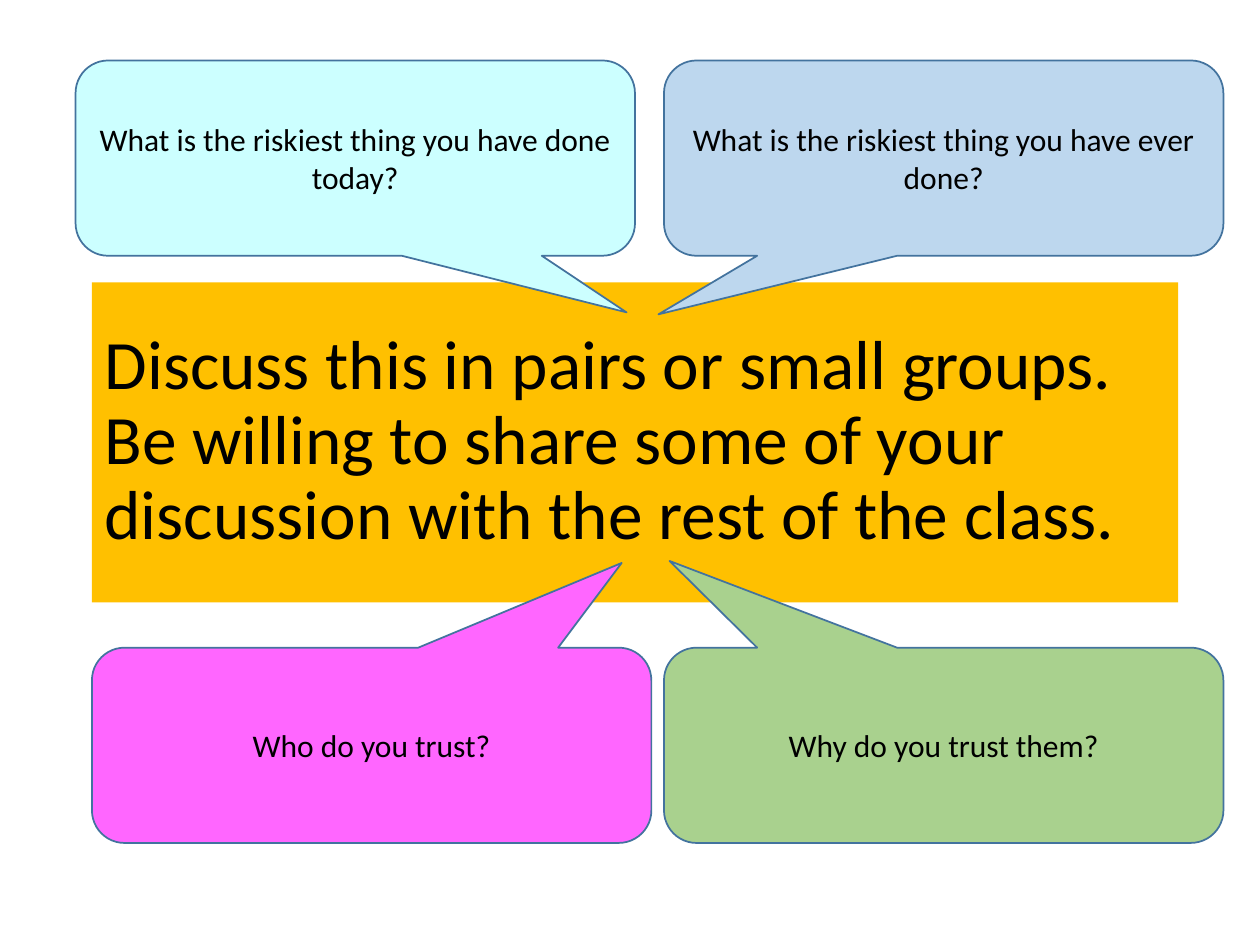
from dataclasses import dataclass

from lxml import etree
from pptx import Presentation
from pptx.dml.color import RGBColor
from pptx.enum.shapes import MSO_SHAPE
from pptx.enum.text import MSO_ANCHOR, MSO_AUTO_SIZE, PP_ALIGN
from pptx.oxml.ns import qn
from pptx.slide import Slide
from pptx.text.text import TextFrame
from pptx.util import Inches, Pt

CALLOUT = MSO_SHAPE.ROUNDED_RECTANGULAR_CALLOUT
MIDDLE = MSO_ANCHOR.MIDDLE
NO_AUTOFIT = MSO_AUTO_SIZE.NONE
LEFT, CENTER = PP_ALIGN.LEFT, PP_ALIGN.CENTER

FONT = "Calibri"
COLORS = {
    "text": "000000",
    "instruction": "FFC000",
    "outline": "43739E",
    "ever": "BDD7EE",
    "today": "CCFFFF",
    "who": "FF66FF",
    "why": "A9D18E",
}
BUBBLE_WIDTH, BUBBLE_HEIGHT = 4.44, 1.55
TOP_ROW, BOTTOM_ROW = 0.48, 5.14
RIGHT_COLUMN = 5.27
CORNER = 0.167


@dataclass(frozen=True)
class Bubble:
    question: str
    color: str
    left: float
    top: float
    tail_x: float
    tail_y: float


BUBBLES = [
    Bubble("What is the riskiest thing you have ever done?", "ever",
           RIGHT_COLUMN, TOP_ROW, -0.51, 0.8),
    Bubble("What is the riskiest thing you have done today?", "today",
           0.6, TOP_ROW, 0.485, 0.79),
    Bubble("Who do you trust?", "who", 0.73, BOTTOM_ROW, 0.447, -0.934),
    Bubble("Why do you trust them?", "why",
           RIGHT_COLUMN, BOTTOM_ROW, -0.49, -0.944),
]
INSTRUCTION = (
    "Discuss this in pairs or small groups.\v"
    "Be willing to share some of your discussion with the rest of the class."
)


def rgb(name: str) -> RGBColor:
    return RGBColor.from_string(COLORS[name])


def write_text(frame: TextFrame, text: str, *, size: float,
               align: PP_ALIGN = CENTER, spacing: float = 1.0) -> None:
    frame.word_wrap = True
    frame.auto_size = NO_AUTOFIT
    frame.vertical_anchor = MIDDLE
    paragraph = frame.paragraphs[0]
    paragraph.text = text
    paragraph.alignment = align
    paragraph.line_spacing = spacing
    for run in paragraph.runs:
        run.font.name = FONT
        run.font.size = Pt(size)
        run.font.color.rgb = rgb("text")
    for line_break in paragraph._p.findall(qn("a:br")):
        etree.SubElement(line_break, qn("a:rPr"), sz=str(round(size * 100)))


def add_instruction(slide: Slide) -> None:
    title = slide.shapes.title
    title.left, title.top = Inches(0.73), Inches(2.24)
    title.width, title.height = Inches(8.62), Inches(2.54)
    title.fill.solid()
    title.fill.fore_color.rgb = rgb("instruction")
    write_text(title.text_frame, INSTRUCTION, size=39.6, align=LEFT, spacing=0.9)


def add_bubble(slide: Slide, bubble: Bubble) -> None:
    callout = slide.shapes.add_shape(
        CALLOUT, Inches(bubble.left), Inches(bubble.top),
        Inches(BUBBLE_WIDTH), Inches(BUBBLE_HEIGHT))
    for index, value in enumerate((bubble.tail_x, bubble.tail_y, CORNER)):
        callout.adjustments[index] = value
    callout.shadow.inherit = False
    callout.fill.solid()
    callout.fill.fore_color.rgb = rgb(bubble.color)
    callout.line.color.rgb = rgb("outline")
    callout.line.width = Pt(1)
    write_text(callout.text_frame, bubble.question, size=18)


def main() -> None:
    presentation = Presentation()
    presentation.slide_width, presentation.slide_height = Inches(10), Inches(7.5)
    slide = presentation.slides.add_slide(presentation.slide_layouts[5])
    add_instruction(slide)
    for bubble in BUBBLES:
        add_bubble(slide, bubble)
    presentation.save("out.pptx")


if __name__ == "__main__":
    main()
